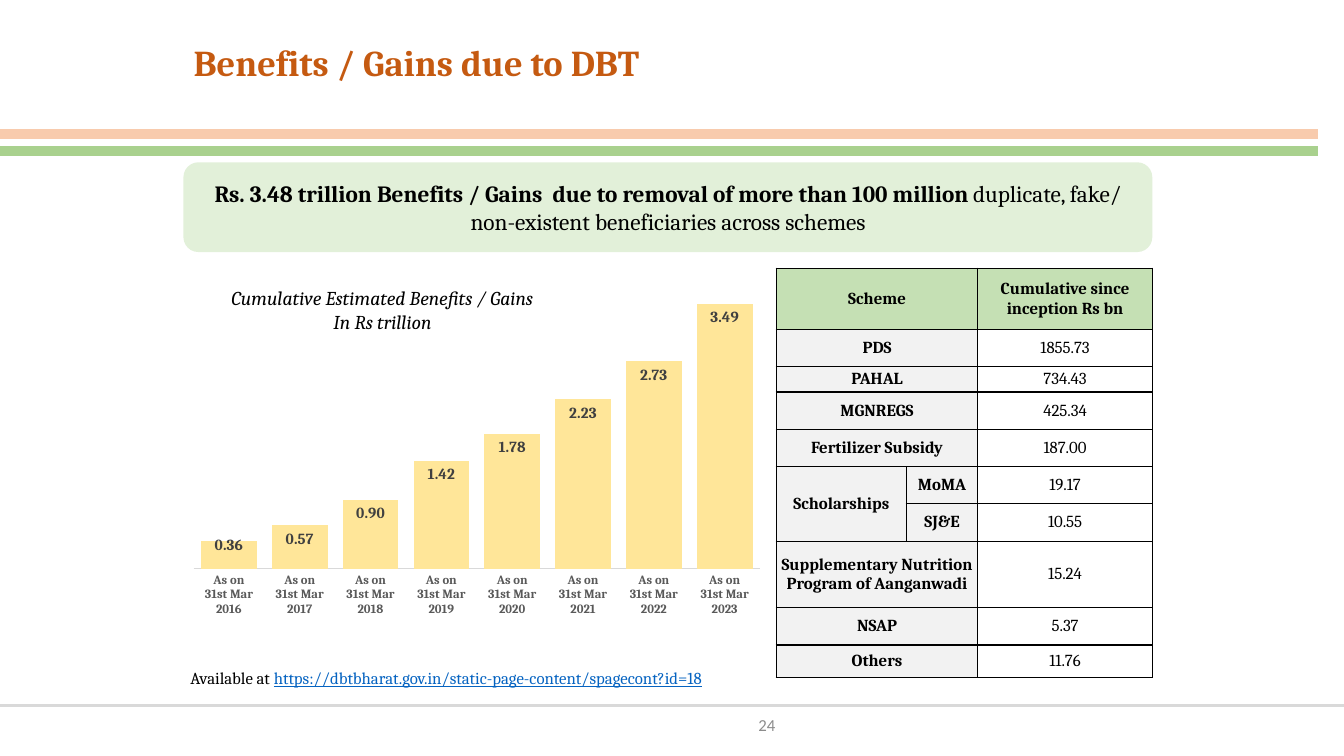
from lxml.etree import SubElement
from pptx import Presentation
from pptx.chart.data import CategoryChartData
from pptx.dml.color import RGBColor
from pptx.enum.chart import XL_CHART_TYPE, XL_LABEL_POSITION, XL_TICK_MARK
from pptx.enum.shapes import MSO_CONNECTOR, MSO_SHAPE
from pptx.enum.text import MSO_ANCHOR, MSO_AUTO_SIZE, PP_ALIGN
from pptx.oxml import parse_xml
from pptx.oxml.ns import nsdecls, qn
from pptx.util import Inches, Pt

SERIF = "Cambria"
TITLE = "Benefits / Gains due to DBT"
BANNER = [
    ("Rs. 3.48 trillion Benefits / Gains  due to removal of more than 100 million ", True),
    ("duplicate, fake/ non-existent beneficiaries across schemes", False),
]
CAPTION = ["Cumulative Estimated Benefits / Gains", "In Rs trillion"]
SOURCE = ("Available at ", "https://dbtbharat.gov.in/static-page-content/spagecont?id=18")
NUMBER = "24"
GAINS = {2016: 0.36, 2017: 0.57, 2018: 0.90, 2019: 1.42,
         2020: 1.78, 2021: 2.23, 2022: 2.73, 2023: 3.49}
COLS = (1.29, 0.71, 1.73)
ROWS = [
    (0.61, "Scheme", "", "Cumulative since inception Rs bn"),
    (0.37, "PDS", "", "1855.73"),
    (0.25, "PAHAL", "", "734.43"),
    (0.37, "MGNREGS", "", "425.34"),
    (0.37, "Fertilizer Subsidy", "", "187.00"),
    (0.37, "Scholarships", "MoMA", "19.17"),
    (0.37, "", "SJ&E", "10.55"),
    (0.66, "Supplementary Nutrition Program of Aanganwadi", "", "15.24"),
    (0.37, "NSAP", "", "5.37"),
    (0.32, "Others", "", "11.76"),
]
RULES = [(17.73, 98.05, "F8CBAD", 6.75), (20, 98.05, "A9D18E", 6.75),
         (93.33, 100, "D9D9D9", 2.75)]
PLACES = {
    "title": (13.65, 4.13, 71.64, 8.13),
    "banner": (13.65, 21.47, 72.09, 11.87),
    "chart": (14.1, 34.53, 42.76, 52.53),
    "caption": (15, 37.2, 26.93, 7.6),
    "table": (57.76, 35.47, 27.98, 54.13),
    "source": (13.43, 87.73, 44.41, 4),
    "number": (41.56, 93.47, 16.88, 4.93),
}

deck = Presentation()
deck.slide_width, deck.slide_height = Inches(13.33), Inches(7.5)
slide = deck.slides.add_slide(deck.slide_layouts[5])
shapes = slide.shapes


def color(code):
    """Turn a hex string into a colour."""
    return RGBColor.from_string(code)


def place(x, y, w=0, h=0):
    """Turn percent shares of the slide into lengths."""
    wide, high = deck.slide_width / 100, deck.slide_height / 100
    return [int(n) for n in (x * wide, y * high, w * wide, h * high)]


def style(font, size, code="000000", face=SERIF, bold=False, italic=False):
    """Set the look of a font."""
    font.size, font.name, font.bold, font.italic = Pt(size), face, bold, italic
    font.color.rgb = color(code)


def write(para, text, size, align=PP_ALIGN.LEFT, **look):
    """Add one styled run to a paragraph."""
    para.alignment = align
    run = para.add_run()
    run.text = text
    style(run.font, size, **look)
    return run


def label(name, anchor=MSO_ANCHOR.TOP):
    """Add an empty wrapping text box at a named place."""
    frame = shapes.add_textbox(*place(*PLACES[name])).text_frame
    frame.word_wrap, frame.vertical_anchor = True, anchor
    return frame


def draw_rules():
    """Draw the full-width lines."""
    for y, end, code, width in RULES:
        x1, y1, x2, _ = place(0, y, end)
        line = shapes.add_connector(MSO_CONNECTOR.STRAIGHT, x1, y1, x2, y1)
        line.line.color.rgb, line.line.width = color(code), Pt(width)
        SubElement(line._element.spPr, qn("a:effectLst"))


def draw_text():
    """Fill the title, banner, source and page number."""
    title = shapes.title
    title.left, title.top, title.width, title.height = place(*PLACES["title"])
    frame = title.text_frame
    frame.auto_size, frame.vertical_anchor = MSO_AUTO_SIZE.NONE, MSO_ANCHOR.MIDDLE
    write(frame.paragraphs[0], TITLE, 26, code="C55A11", bold=True)

    banner = shapes.add_shape(MSO_SHAPE.ROUNDED_RECTANGLE, *place(*PLACES["banner"]))
    banner.shadow.inherit = False
    banner.fill.solid()
    banner.fill.fore_color.rgb = color("E2F0D9")
    banner.line.fill.background()
    frame = banner.text_frame
    frame.word_wrap, frame.vertical_anchor = True, MSO_ANCHOR.MIDDLE
    for text, bold in BANNER:
        write(frame.paragraphs[0], text, 16.6, PP_ALIGN.CENTER, bold=bold)

    para = label("source").paragraphs[0]
    write(para, SOURCE[0], 12)
    write(para, SOURCE[1], 12, code="0563C1").font.underline = True
    para = label("number", MSO_ANCHOR.MIDDLE).paragraphs[0]
    write(para, NUMBER, 12, PP_ALIGN.RIGHT, code="8C8C8C", face="Calibri")


def layout(**parts):
    """Build a manual chart layout."""
    inner = "".join(f'<c:{key} val="{val}"/>' for key, val in parts.items())
    return parse_xml(f'<c:layout {nsdecls("c")}><c:manualLayout>{inner}'
                     '</c:manualLayout></c:layout>')


def draw_chart():
    """Add the column chart and its caption."""
    data = CategoryChartData(number_format="0.00")
    data.categories = [f"As on\n31st Mar {year}" for year in GAINS]
    data.add_series("Series 1", GAINS.values())
    chart = shapes.add_chart(XL_CHART_TYPE.COLUMN_STACKED,
                             *place(*PLACES["chart"]), data).chart
    chart.has_title = chart.has_legend = False
    style(chart.font, 10, face="Calibri")
    area = chart._chartSpace.chart.plotArea
    for old in area.findall(qn("c:layout")):
        area.remove(old)
    area.insert(0, layout(layoutTarget="inner", xMode="edge", yMode="edge",
                          x=0.007, y=0.01, w=0.986, h=0.765))
    value, years = chart.value_axis, chart.category_axis
    value.minimum_scale, value.maximum_scale = 0, 4
    value.has_major_gridlines = value.visible = False
    years.major_tick_mark = XL_TICK_MARK.NONE
    style(years.tick_labels.font, 9, "595959", bold=True)
    years.format.line.color.rgb = color("D9D9D9")
    years.format.line.width = Pt(0.75)

    plot = chart.plots[0]
    plot.gap_width, plot.overlap, plot.vary_by_categories = 27, 100, False
    bars = plot.series[0]
    bars.format.fill.solid()
    bars.format.fill.fore_color.rgb = color("FFE699")
    tags = bars.data_labels
    tags.show_value, tags.position = True, XL_LABEL_POSITION.INSIDE_END
    tags.number_format, tags.number_format_is_linked = "#,##0.00", False
    style(tags.font, 11, "404040", bold=True)
    first = bars.points[0].data_label
    first.position = XL_LABEL_POSITION.INSIDE_END
    style(first.font, 11, "404040", bold=True)
    tags._element.find(qn("c:dLbl")).insert(1, layout(x=0, y=-0.025))

    frame = label("caption")
    for i, text in enumerate(CAPTION):
        para = frame.add_paragraph() if i else frame.paragraphs[0]
        write(para, text, 14, PP_ALIGN.CENTER, italic=True)


def edge(cell):
    """Give a cell a thin black border on all sides."""
    props = cell._tc.get_or_add_tcPr()
    for side in "LRTB":
        props.append(parse_xml(
            f'<a:ln{side} {nsdecls("a")} w="12700"><a:solidFill>'
            f'<a:srgbClr val="000000"/></a:solidFill></a:ln{side}>'))


def draw_table():
    """Add the table of schemes."""
    grid = shapes.add_table(len(ROWS), len(COLS), *place(*PLACES["table"])).table
    grid.first_row = grid.horz_banding = False
    for col, width in zip(grid.columns, COLS):
        col.width = Inches(width)
    for r, (height, *texts) in enumerate(ROWS):
        grid.rows[r].height = Inches(height)
        for c, text in enumerate(texts):
            cell = grid.cell(r, c)
            amount = r > 0 and c == 2
            pad = Inches(0.01 if amount else 0.05)
            cell.margin_left = cell.margin_right = pad
            cell.margin_top = cell.margin_bottom = 0
            cell.vertical_anchor = MSO_ANCHOR.MIDDLE
            edge(cell)
            if amount:
                cell.fill.background()
            else:
                cell.fill.solid()
                cell.fill.fore_color.rgb = color("F2F2F2" if r else "C5E0B4")
            if text:
                write(cell.text_frame.paragraphs[0], text, 12,
                      PP_ALIGN.CENTER, bold=not amount)
        if texts[0] and not texts[1]:
            grid.cell(r, 0).merge(grid.cell(r, 1))
        elif not texts[0]:
            grid.cell(r - 1, 0).merge(grid.cell(r, 0))


if __name__ == "__main__":
    draw_rules()
    draw_text()
    draw_chart()
    draw_table()
    deck.save("out.pptx")
